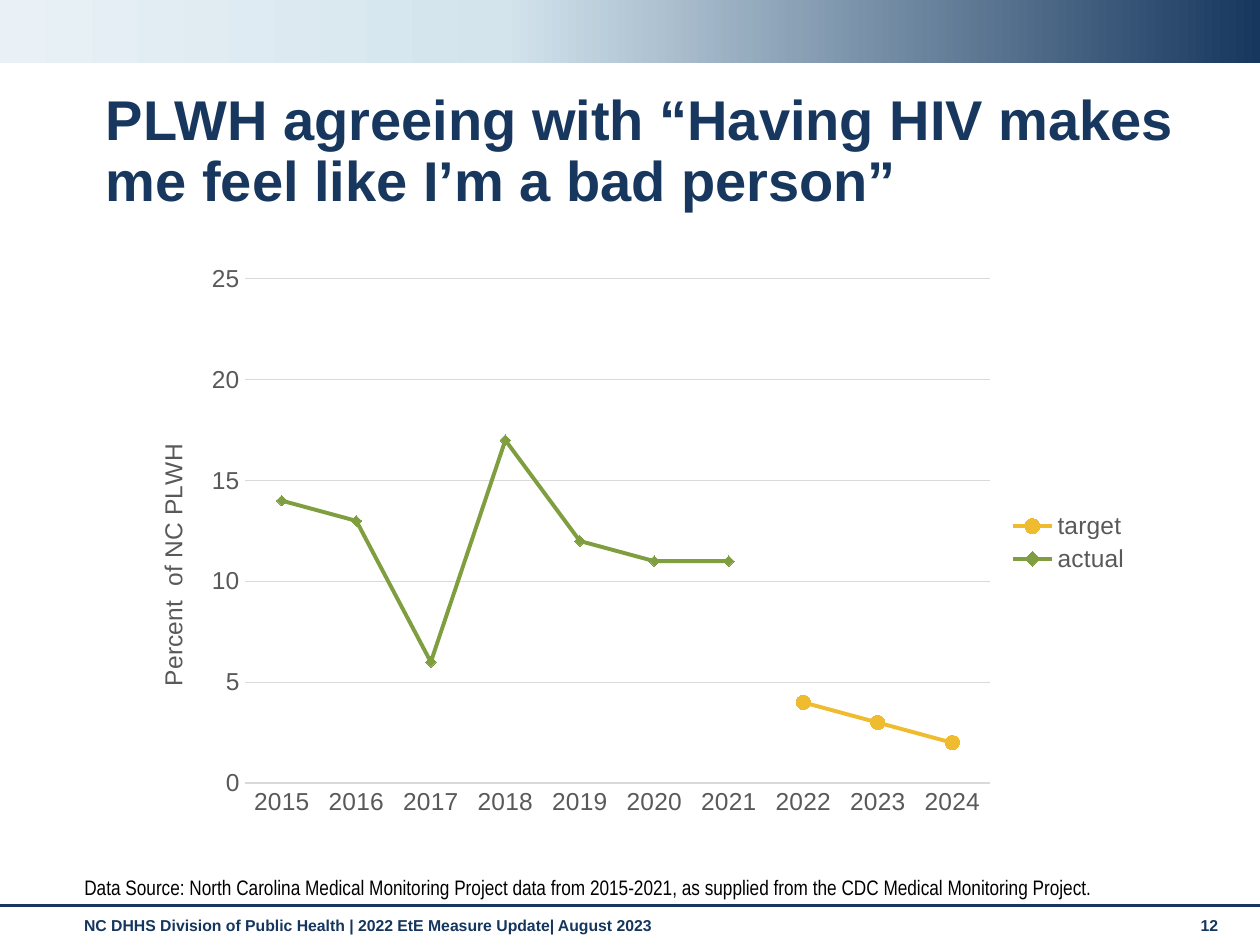
from copy import deepcopy

from lxml import etree
from pptx import Presentation
from pptx.chart.data import CategoryChartData
from pptx.dml.color import RGBColor
from pptx.enum.chart import XL_CHART_TYPE, XL_LEGEND_POSITION, XL_MARKER_STYLE, XL_TICK_MARK
from pptx.enum.shapes import MSO_CONNECTOR, MSO_SHAPE
from pptx.enum.text import MSO_ANCHOR, MSO_AUTO_SIZE, PP_ALIGN
from pptx.oxml import parse_xml
from pptx.oxml.ns import nsdecls, qn
from pptx.util import Pt

LINE_CHART = XL_CHART_TYPE.LINE_MARKERS
LEGEND_RIGHT = XL_LEGEND_POSITION.RIGHT
CIRCLE = XL_MARKER_STYLE.CIRCLE
DIAMOND = XL_MARKER_STYLE.DIAMOND
NO_TICK = XL_TICK_MARK.NONE
STRAIGHT = MSO_CONNECTOR.STRAIGHT
RECTANGLE = MSO_SHAPE.RECTANGLE
TOP, BOTTOM = MSO_ANCHOR.TOP, MSO_ANCHOR.BOTTOM
NO_AUTOFIT = MSO_AUTO_SIZE.NONE
LEFT = PP_ALIGN.LEFT

NAVY = RGBColor(0x17, 0x37, 0x5E)
FOOTER_NAVY = RGBColor(0x15, 0x36, 0x5E)
PALE_BLUE = RGBColor(0xD3, 0xE4, 0xED)
ICE = RGBColor(0xE9, 0xF1, 0xF6)
BLACK = RGBColor(0, 0, 0)
GRAY = RGBColor(0x59, 0x59, 0x59)
LIGHT_GRAY = RGBColor(0xD9, 0xD9, 0xD9)
GOLD = RGBColor(0xEF, 0xBB, 0x2F)
GREEN = RGBColor(0x7F, 0x9E, 0x3F)


def write_text(shape, text, size, color, bold, font_name="Arial", anchor=TOP):
    frame = shape.text_frame
    frame.word_wrap = True
    frame.auto_size = NO_AUTOFIT
    frame.vertical_anchor = anchor
    paragraph = frame.paragraphs[0]
    paragraph.alignment = LEFT
    paragraph.space_before = Pt(0)
    run = paragraph.add_run()
    run.text = text
    run.font.name = font_name
    run.font.size = Pt(size)
    run.font.bold = bold
    run.font.color.rgb = color
    return paragraph


def set_layout(parent, **fractions):
    layout = parent.find(qn("c:layout"))
    if layout is None:
        layout = parse_xml(f"<c:layout {nsdecls('c')}/>")
        tag = "c:tx" if parent.find(qn("c:tx")) is not None else None
        if tag:
            parent.find(qn(tag)).addnext(layout)
        else:
            parent.insert(0, layout)
    manual = etree.SubElement(layout, qn("c:manualLayout"))
    for name, value in fractions.items():
        etree.SubElement(manual, qn(f"c:{name}")).set("val", str(value))


presentation = Presentation()
presentation.slide_width = Pt(720)
presentation.slide_height = Pt(540)
slide = presentation.slides.add_slide(presentation.slide_layouts[1])
shapes = slide.shapes

banner = shapes.add_shape(RECTANGLE, Pt(0), Pt(0), Pt(720), Pt(36))
banner.shadow.inherit = False
banner.line.fill.background()
banner.fill.gradient()
banner.fill.gradient_angle = 0
last_stop = banner._element.spPr.find(".//" + qn("a:gsLst"))[-1]
last_stop.addprevious(deepcopy(last_stop))
banner_stops = [(0, ICE), (0.4, PALE_BLUE), (1, NAVY)]
for stop, (position, color) in zip(banner.fill.gradient_stops, banner_stops):
    stop.position = position
    stop.color.rgb = color

rule = shapes.add_connector(STRAIGHT, Pt(0), Pt(517.5), Pt(720), Pt(517.5))
rule.line.color.rgb = NAVY
rule.line.width = Pt(1.75)
etree.SubElement(rule._element.spPr, qn("a:effectLst"))

footer_items = [
    ("NC DHHS Division of Public Health | 2022 EtE Measure Update| August 2023", 41, 629),
    ("12", 679, 32),
]
for text, left, width in footer_items:
    box = shapes.add_textbox(Pt(left), Pt(520), Pt(width), Pt(21))
    write_text(box, text, 9, FOOTER_NAVY, True)

title = shapes.title
title.left, title.top, title.width, title.height = Pt(53.3), Pt(49), Pt(648), Pt(43)
title_paragraph = write_text(
    title, "PLWH agreeing with “Having HIV makes me feel like I’m a bad person”", 32, NAVY, True
)
title_paragraph.line_spacing = 0.9

source = slide.placeholders[1]
source.left, source.top, source.width, source.height = Pt(41), Pt(491.8), Pt(629), Pt(26)
source_paragraph = write_text(
    source,
    "Data Source: North Carolina Medical Monitoring Project data from 2015-2021, "
    "as supplied from the CDC Medical Monitoring Project.",
    12, BLACK, False, "Arial Narrow", BOTTOM,
)
properties = source_paragraph._p.get_or_add_pPr()
properties.set("marL", "0")
properties.set("indent", "0")
etree.SubElement(properties, qn("a:buNone"))

chart_data = CategoryChartData()
chart_data.categories = [str(year) for year in range(2015, 2025)]
chart_data.add_series("target", [None] * 7 + [4, 3, 2])
chart_data.add_series("actual", [14, 13, 6, 17, 12, 11, 11] + [None] * 3)
chart = shapes.add_chart(
    LINE_CHART, Pt(69.8), Pt(146.2), Pt(583.2), Pt(327.6), chart_data
).chart
chart.font.name = "Arial"
chart.font.size = Pt(14)
chart.font.color.rgb = GRAY
chart.has_title = False
chart.has_legend = True
chart.legend.position = LEGEND_RIGHT
chart.legend.include_in_layout = False

plot = chart.plots[0]
plot.vary_by_categories = False
series_styles = [(GOLD, CIRCLE, 8), (GREEN, DIAMOND, 6)]
for series, (color, marker_style, marker_size) in zip(plot.series, series_styles):
    series.smooth = False
    series.format.line.color.rgb = color
    series.format.line.width = Pt(2.25)
    marker = series.marker
    marker.style = marker_style
    marker.size = marker_size
    marker.format.fill.solid()
    marker.format.fill.fore_color.rgb = color
    if marker_style == CIRCLE:
        marker.format.line.fill.background()
    else:
        marker.format.line.color.rgb = color

category_axis = chart.category_axis
value_axis = chart.value_axis
for axis in (category_axis, value_axis):
    axis.major_tick_mark = NO_TICK
    axis.minor_tick_mark = NO_TICK
value_axis.minimum_scale = 0
value_axis.maximum_scale = 25
value_axis.major_unit = 5
value_axis.format.line.fill.background()
value_axis.has_major_gridlines = True
for line in (category_axis.format.line, value_axis.major_gridlines.format.line):
    line.color.rgb = LIGHT_GRAY
    line.width = Pt(0.75)

axis_title = value_axis.axis_title
axis_run = axis_title.text_frame.paragraphs[0].add_run()
axis_run.text = "Percent  of NC PLWH"
axis_run.font.name = "Arial"
axis_run.font.size = Pt(14)
axis_run.font.bold = False
axis_run.font.color.rgb = GRAY
axis_body = axis_title._element.find(".//" + qn("a:bodyPr"))
axis_body.set("rot", "-5400000")
axis_body.set("vert", "horz")

set_layout(axis_title._element, xMode="edge", yMode="edge", x=0.03, y=0.32)
set_layout(
    chart._chartSpace.find(".//" + qn("c:plotArea")),
    layoutTarget="inner", xMode="edge", yMode="edge", x=0.12, y=0.04, w=0.73, h=0.88,
)

presentation.save("out.pptx")
